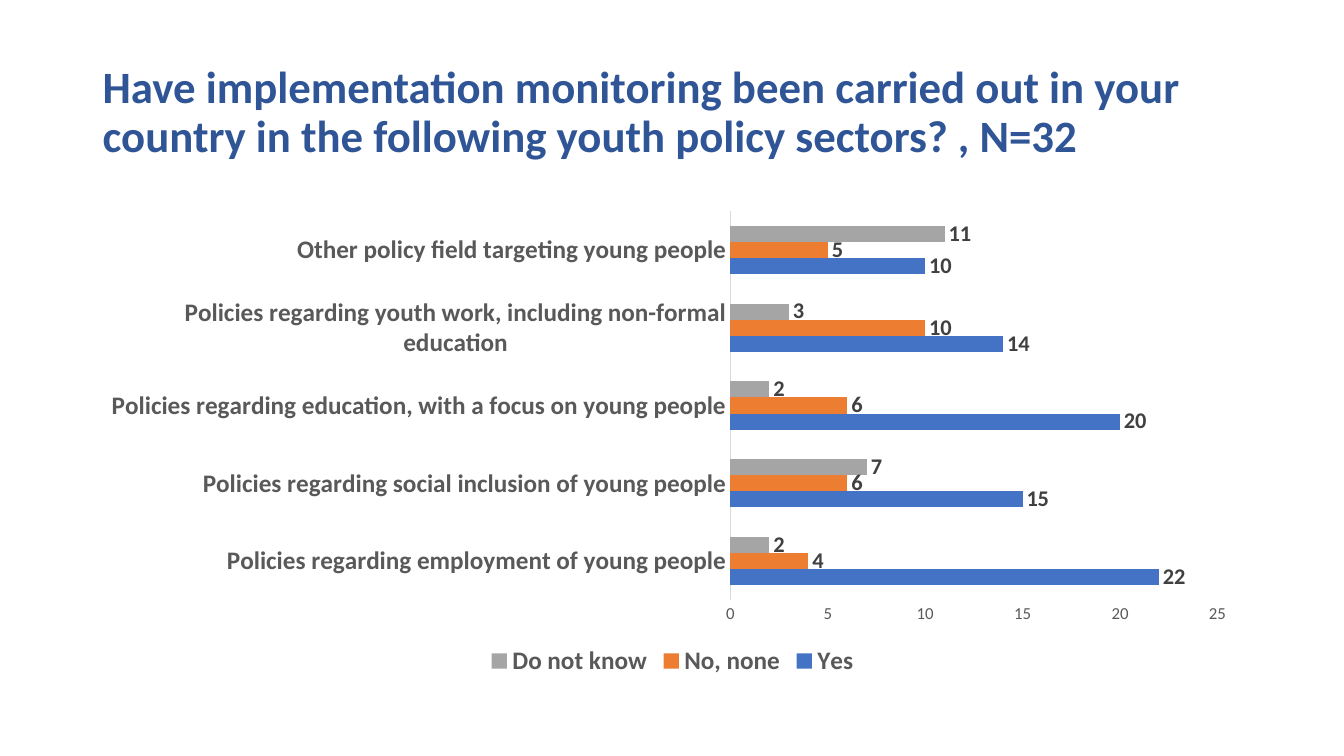
from lxml.etree import SubElement
from pptx import Presentation
from pptx.chart.data import CategoryChartData
from pptx.dml.color import RGBColor
from pptx.enum.chart import (XL_CHART_TYPE, XL_LABEL_POSITION,
                             XL_LEGEND_POSITION, XL_TICK_MARK)
from pptx.enum.text import MSO_ANCHOR
from pptx.oxml.ns import qn
from pptx.util import Inches, Pt

WIDE, HIGH = 13.33, 7.5
LEFT, SPAN = 0.92, 11.5
FACE = "Calibri"
GREY = "595959"

TITLE = ("Have implementation monitoring been carried out in your country "
         "in the following youth policy sectors? , N=32")
SECTORS = [
    "Policies regarding employment of young people",
    "Policies regarding social inclusion of young people",
    "Policies regarding education, with a focus on young people",
    "Policies regarding youth work, including non-formal education",
    "Other policy field targeting young people",
]
ANSWERS = [
    ("Yes", "4472C4", [22, 15, 20, 14, 10]),
    ("No, none", "ED7D31", [4, 6, 6, 10, 5]),
    ("Do not know", "A5A5A5", [2, 7, 2, 3, 11]),
]
# Inner plot area as shares of the chart frame
PLOT = {"x": 0.55, "y": 0.02, "w": 0.42, "h": 0.81}


def color(text):
    return RGBColor.from_string(text)


def style(font, size, shade, bold=False):
    font.name, font.size, font.bold = FACE, Pt(size), bold
    font.color.rgb = color(shade)


def box(top, high):
    """Frame across the content column."""
    return [Inches(n) for n in (LEFT, top, SPAN, high)]


def add_title(slide, text):
    frame = slide.shapes.add_textbox(*box(0.4, 1.45)).text_frame
    frame.word_wrap = True
    frame.vertical_anchor = MSO_ANCHOR.MIDDLE
    para = frame.paragraphs[0]
    para.text = text
    para.line_spacing = 0.9
    style(para.font, 32, "2F5597", True)


def set_plot(chart):
    """Fix the plot area, leaving room for long labels."""
    area = chart._chartSpace.chart.plotArea
    for old in area.findall(qn("c:layout")):
        area.remove(old)
    layout = SubElement(area, qn("c:layout"))
    area.insert(0, layout)
    manual = SubElement(layout, qn("c:manualLayout"))
    rules = {"layoutTarget": "inner", "xMode": "edge", "yMode": "edge", **PLOT}
    for tag, val in rules.items():
        SubElement(manual, qn("c:" + tag)).set("val", str(val))


def set_axis(axis, size, bold=False):
    axis.has_major_gridlines = False
    axis.major_tick_mark = axis.minor_tick_mark = XL_TICK_MARK.NONE
    style(axis.tick_labels.font, size, GREY, bold)


def set_bars(series, shade):
    fill = series.format.fill
    fill.solid()
    fill.fore_color.rgb = color(shade)
    labels = series.data_labels
    labels.show_value = True
    labels.position = XL_LABEL_POSITION.OUTSIDE_END
    style(labels.font, 16, "404040", True)


def add_bars(slide):
    data = CategoryChartData()
    data.categories = SECTORS
    for name, _, vals in ANSWERS:
        data.add_series(name, vals)
    chart = slide.shapes.add_chart(
        XL_CHART_TYPE.BAR_CLUSTERED, *box(2, 4.76), data).chart
    chart.has_title = False
    style(chart.font, 10, "000000")
    set_plot(chart)

    # Bars
    plot = chart.plots[0]
    plot.gap_width, plot.overlap = 182, 0
    plot.vary_by_categories = False
    for series, (_, shade, _) in zip(plot.series, ANSWERS):
        set_bars(series, shade)

    # Axes
    set_axis(chart.category_axis, 18, True)
    line = chart.category_axis.format.line
    line.width = Pt(0.75)
    line.color.rgb = color("D9D9D9")
    axis = chart.value_axis
    set_axis(axis, 12)
    axis.minimum_scale, axis.maximum_scale, axis.major_unit = 0, 25, 5
    axis.format.line.fill.background()

    # Legend
    chart.has_legend = True
    chart.legend.position = XL_LEGEND_POSITION.BOTTOM
    chart.legend.include_in_layout = False
    style(chart.legend.font, 18, GREY, True)


def main():
    deck = Presentation()
    deck.slide_width, deck.slide_height = Inches(WIDE), Inches(HIGH)
    slide = deck.slides.add_slide(deck.slide_layouts[6])
    add_title(slide, TITLE)
    add_bars(slide)
    deck.save("out.pptx")


if __name__ == "__main__":
    main()
